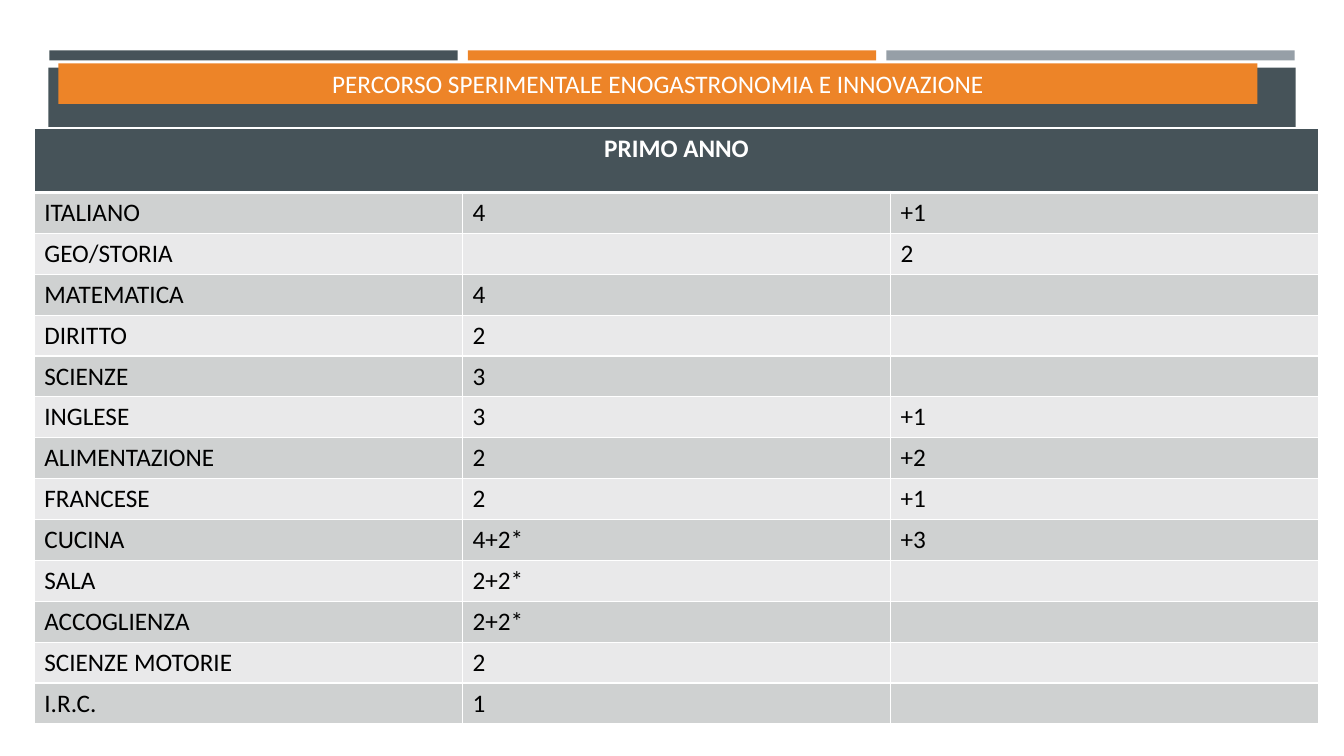
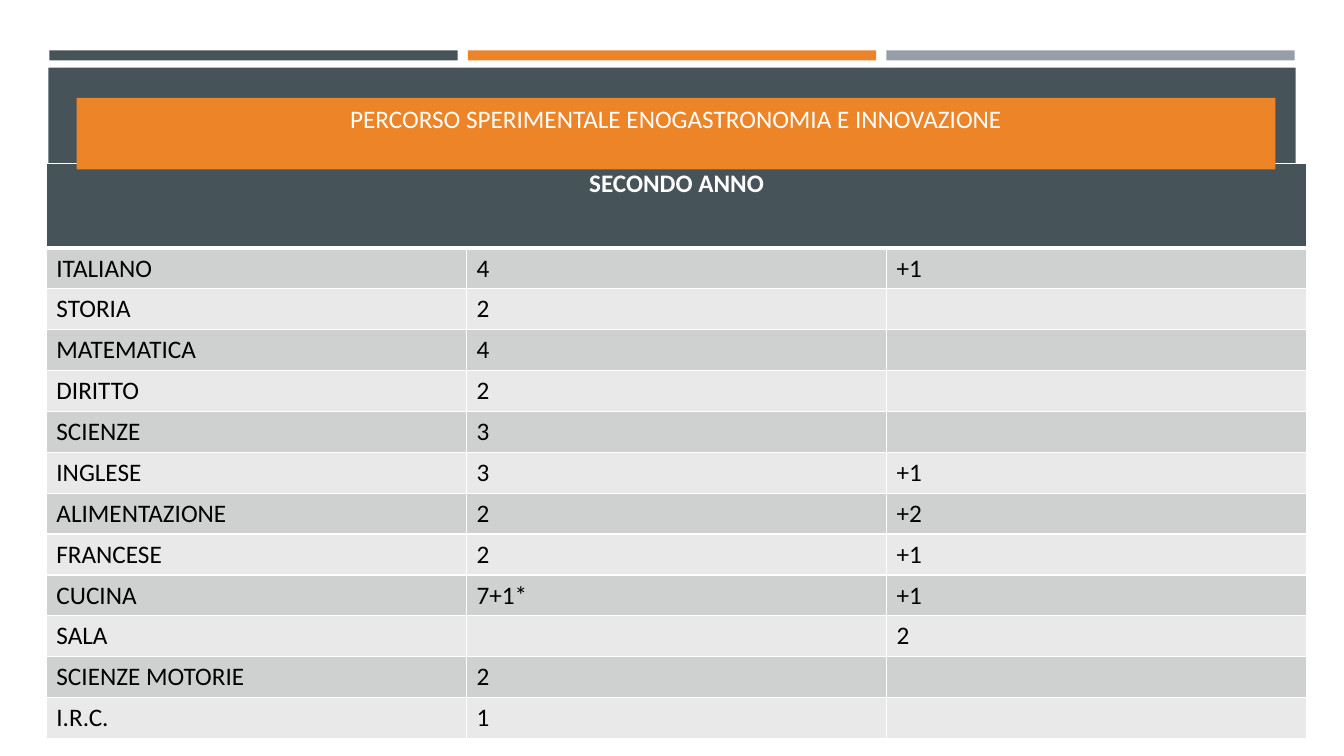
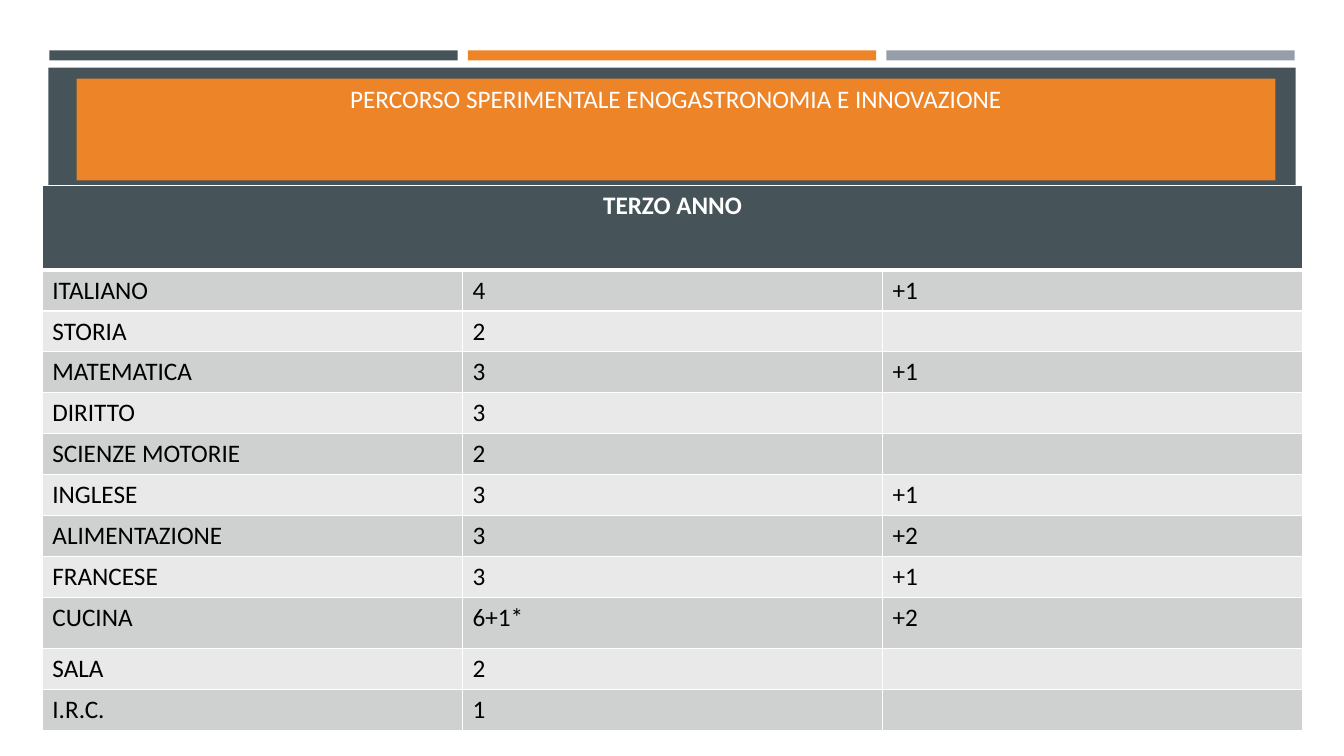
from dataclasses import dataclass, field

from lxml import etree
from pptx import Presentation
from pptx import util as u
from pptx.dml.color import RGBColor
from pptx.enum import shapes, text
from pptx.oxml.ns import qn

WIDE, HIGH = 13.33, 7.5
FONT, SIZE = "Calibri", 18
HUES = {
    "slate": "465359",
    "orange": "ED8428",
    "gray": "969FA7",
    "odd": "CFD1D1",
    "even": "E9E9EA",
    "white": "FFFFFF",
    "black": "000000",
}
TITLE = "PERCORSO SPERIMENTALE ENOGASTRONOMIA E INNOVAZIONE"
LEFT, TOP = 0.49, 0.5
BAR, GAP = 4.05, 0.1
COLS = 3
ROW = 0.4


@dataclass
class Box:
    left: float
    top: float
    wide: float
    high: float

    def emu(self) -> list[u.Emu]:
        return [u.Inches(v) for v in (self.left, self.top, self.wide, self.high)]


@dataclass
class Year:
    name: str
    title: Box
    left: float
    top: float
    wide: float
    head: float
    rows: list[tuple[str, str, str]]
    tall: dict[str, float] = field(default_factory=dict)


YEARS = [
    Year("PRIMO ANNO", Box(0.58, 0.63, 11.89, 0.4), 0.34, 1.27, 12.74, 0.64, [
        ("ITALIANO", "4", "+1"),
        ("GEO/STORIA", "", "2"),
        ("MATEMATICA", "4", ""),
        ("DIRITTO", "2", ""),
        ("SCIENZE", "3", ""),
        ("INGLESE", "3", "+1"),
        ("ALIMENTAZIONE", "2", "+2"),
        ("FRANCESE", "2", "+1"),
        ("CUCINA", "4+2*", "+3"),
        ("SALA", "2+2*", ""),
        ("ACCOGLIENZA", "2+2*", ""),
        ("SCIENZE MOTORIE", "2", ""),
        ("I.R.C.", "1", ""),
    ]),
    Year("SECONDO ANNO", Box(0.76, 0.97, 11.89, 0.71), 0.46, 1.62, 12.5, 0.84, [
        ("ITALIANO", "4", "+1"),
        ("STORIA", "2", ""),
        ("MATEMATICA", "4", ""),
        ("DIRITTO", "2", ""),
        ("SCIENZE", "3", ""),
        ("INGLESE", "3", "+1"),
        ("ALIMENTAZIONE", "2", "+2"),
        ("FRANCESE", "2", "+1"),
        ("CUCINA", "7+1*", "+1"),
        ("SALA", "", "2"),
        ("SCIENZE MOTORIE", "2", ""),
        ("I.R.C.", "1", ""),
    ]),
    Year("TERZO ANNO", Box(0.76, 0.78, 11.89, 1.01), 0.42, 1.84, 12.5, 0.84, [
        ("ITALIANO", "4", "+1"),
        ("STORIA", "2", ""),
        ("MATEMATICA", "3", "+1"),
        ("DIRITTO", "3", ""),
        ("SCIENZE MOTORIE", "2", ""),
        ("INGLESE", "3", "+1"),
        ("ALIMENTAZIONE", "3", "+2"),
        ("FRANCESE", "3", "+1"),
        ("CUCINA", "6+1*", "+2"),
        ("SALA", "2", ""),
        ("I.R.C.", "1", ""),
    ], {"CUCINA": 0.51}),
]


def paint(item, hue: str) -> None:
    item.fill.solid()
    item.fill.fore_color.rgb = RGBColor.from_string(HUES[hue])


def style(frame, hue: str, bold: bool = False, mid: bool = False) -> None:
    """Format every paragraph and run of a text frame."""
    for para in frame.paragraphs:
        para.alignment = text.PP_ALIGN.CENTER if mid else text.PP_ALIGN.LEFT
        for font in [para.font] + [run.font for run in para.runs]:
            font.name, font.size, font.bold = FONT, u.Pt(SIZE), bold
            font.color.rgb = RGBColor.from_string(HUES[hue])


def edge(cell, top: float, low: float) -> None:
    """Give a cell white borders; top and low are widths in points."""
    props = cell._tc.get_or_add_tcPr()
    sides = {"lnL": 1, "lnR": 1, "lnT": top, "lnB": low}
    for spot, (tag, width) in enumerate(sides.items()):
        line = etree.Element(qn(f"a:{tag}"), w=str(u.Pt(width)))
        fill = etree.SubElement(line, qn("a:solidFill"))
        etree.SubElement(fill, qn("a:srgbClr"), val=HUES["white"])
        props.insert(spot, line)


def bands(slide) -> None:
    """Draw the shared bars and move them to the layout."""
    step = BAR + GAP
    parts = [(Box(LEFT + i * step, TOP, BAR, GAP), hue)
             for i, hue in enumerate(("slate", "orange", "gray"))]
    parts.append((Box(0.48, 0.67, 12.37, 1.3), "slate"))
    tree = slide.slide_layout.shapes._spTree
    for box, hue in parts:
        bar = slide.shapes.add_shape(shapes.MSO_SHAPE.RECTANGLE, *box.emu())
        bar.shadow.inherit = False
        bar.line.fill.background()
        paint(bar, hue)
        tree.append(bar._element)


def grid(slide, year: Year) -> None:
    highs = [year.head] + [year.tall.get(row[0], ROW) for row in year.rows]
    box = Box(year.left, year.top, year.wide, sum(highs))
    table = slide.shapes.add_table(len(highs), COLS, *box.emu()).table
    table.first_row = table.horz_banding = False
    for col in table.columns:
        col.width = u.Inches(year.wide / COLS)
    for r, (high, row) in enumerate(zip(highs, [(year.name, "", "")] + year.rows)):
        table.rows[r].height = u.Inches(high)
        head = r == 0
        for c, word in enumerate(row):
            cell = table.cell(r, c)
            cell.text_frame.text = word
            style(cell.text_frame, "white" if head else "black", head, head)
            paint(cell, "slate" if head else "odd" if r % 2 else "even")
            edge(cell, 3 if r == 1 else 1, 3 if head else 1)
    table.cell(0, 0).merge(table.cell(0, COLS - 1))


def title(slide, box: Box) -> None:
    """Format the title and bring it in front of the table."""
    head = slide.shapes.title
    head.left, head.top, head.width, head.height = box.emu()
    paint(head, "orange")
    frame = head.text_frame
    frame.text = TITLE
    frame.word_wrap = True
    frame.auto_size = text.MSO_AUTO_SIZE.NONE
    frame.vertical_anchor = text.MSO_ANCHOR.TOP
    style(frame, "white", mid=True)
    slide.shapes._spTree.append(head._element)


def main() -> None:
    deck = Presentation()
    deck.slide_width, deck.slide_height = u.Inches(WIDE), u.Inches(HIGH)
    for i, year in enumerate(YEARS):
        slide = deck.slides.add_slide(deck.slide_layouts[5])
        if i == 0:
            bands(slide)
        grid(slide, year)
        title(slide, year.title)
    deck.save("out.pptx")


if __name__ == "__main__":
    main()
